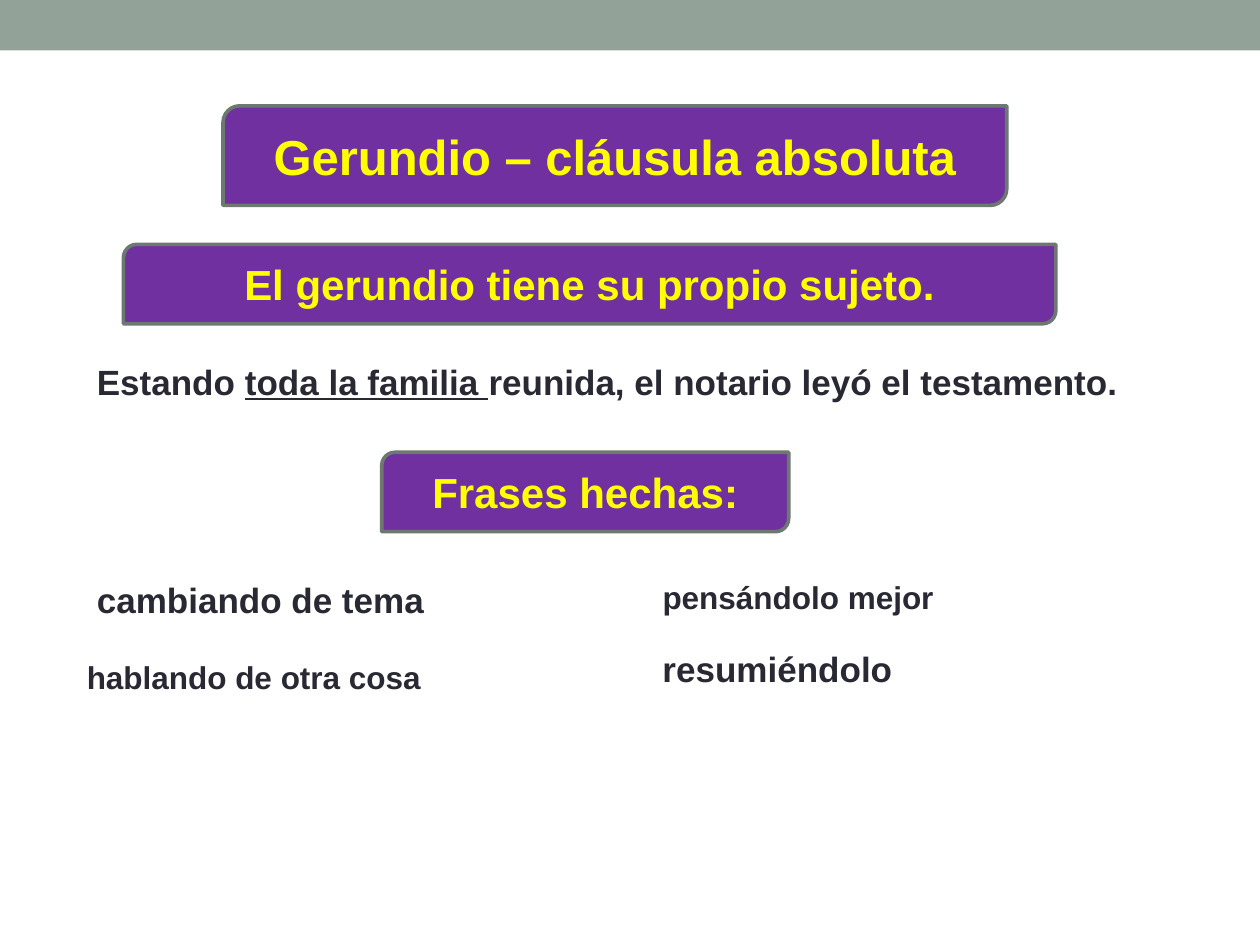
from pptx import Presentation
from pptx.dml.color import RGBColor
from pptx.enum.shapes import MSO_SHAPE
from pptx.enum.text import MSO_ANCHOR, MSO_AUTO_SIZE, PP_ALIGN
from pptx.util import Inches, Pt

RECTANGLE = MSO_SHAPE.RECTANGLE
BANNER = MSO_SHAPE.ROUND_2_DIAG_RECTANGLE
MIDDLE = MSO_ANCHOR.MIDDLE
CENTER = PP_ALIGN.CENTER
FIT_SHAPE = MSO_AUTO_SIZE.SHAPE_TO_FIT_TEXT

SAGE = RGBColor(0x93, 0xA2, 0x99)
PURPLE = RGBColor(0x70, 0x30, 0xA0)
GRAY = RGBColor(0x6D, 0x78, 0x71)
YELLOW = RGBColor(0xFF, 0xFF, 0x00)
DARK = RGBColor(0x29, 0x29, 0x34)

BANNERS = [
    ("Gerundio – cláusula absoluta", 28, (1.77, 0.84, 6.22, 0.79)),
    ("El gerundio tiene su propio sujeto.", 24, (0.98, 1.94, 7.4, 0.63)),
    ("Frases hechas:", 24, (3.03, 3.59, 3.23, 0.63)),
]
EXAMPLE = [
    ("Estando ", False),
    ("toda la familia ", True),
    ("reunida, el notario leyó el testamento.", False),
]
TEXTS = [
    (EXAMPLE, 20, (0.67, 2.81, 8.35, 0.44), True),
    ([("cambiando de tema", False)], 20, (0.67, 4.54, 2.82, 0.44), False),
    ([("hablando de otra cosa", False)], 18, (0.59, 5.17, 2.88, 0.4), False),
    ([("pensándolo mejor", False)], 18, (5.16, 4.54, 2.38, 0.4), False),
    ([("resumiéndolo", False)], 20, (5.16, 5.09, 2.83, 0.44), True),
]


def add_run(paragraph, text, size, color, underline=False):
    run = paragraph.add_run()
    run.text = text
    run.font.color.rgb = color
    formats = {"name": "Arial", "size": Pt(size), "bold": True, "underline": underline}
    for name, value in formats.items():
        setattr(run.font, name, value)


def add_filled_shape(slide, kind, box, color):
    shape = slide.shapes.add_shape(kind, *map(Inches, box))
    shape.shadow.inherit = False
    shape.fill.solid()
    shape.fill.fore_color.rgb = color
    return shape


def add_banner(slide, text, size, box):
    shape = add_filled_shape(slide, BANNER, box, PURPLE)
    shape.line.color.rgb = GRAY
    shape.line.width = Pt(2.08)
    shape.text_frame.vertical_anchor = MIDDLE
    paragraph = shape.text_frame.paragraphs[0]
    paragraph.alignment = CENTER
    add_run(paragraph, text, size, YELLOW)


def add_text(slide, runs, size, box, wrap):
    frame = slide.shapes.add_textbox(*map(Inches, box)).text_frame
    frame.word_wrap = wrap
    frame.auto_size = FIT_SHAPE
    for text, underline in runs:
        add_run(frame.paragraphs[0], text, size, DARK, underline)


def main():
    presentation = Presentation()
    presentation.slide_width = Inches(10)
    presentation.slide_height = Inches(7.5)
    slide = presentation.slides.add_slide(presentation.slide_layouts[6])
    top_bar = add_filled_shape(slide, RECTANGLE, (0, 0, 10, 0.4), SAGE)
    top_bar.line.fill.background()
    for banner in BANNERS:
        add_banner(slide, *banner)
    for text in TEXTS:
        add_text(slide, *text)
    presentation.save("out.pptx")


if __name__ == "__main__":
    main()
